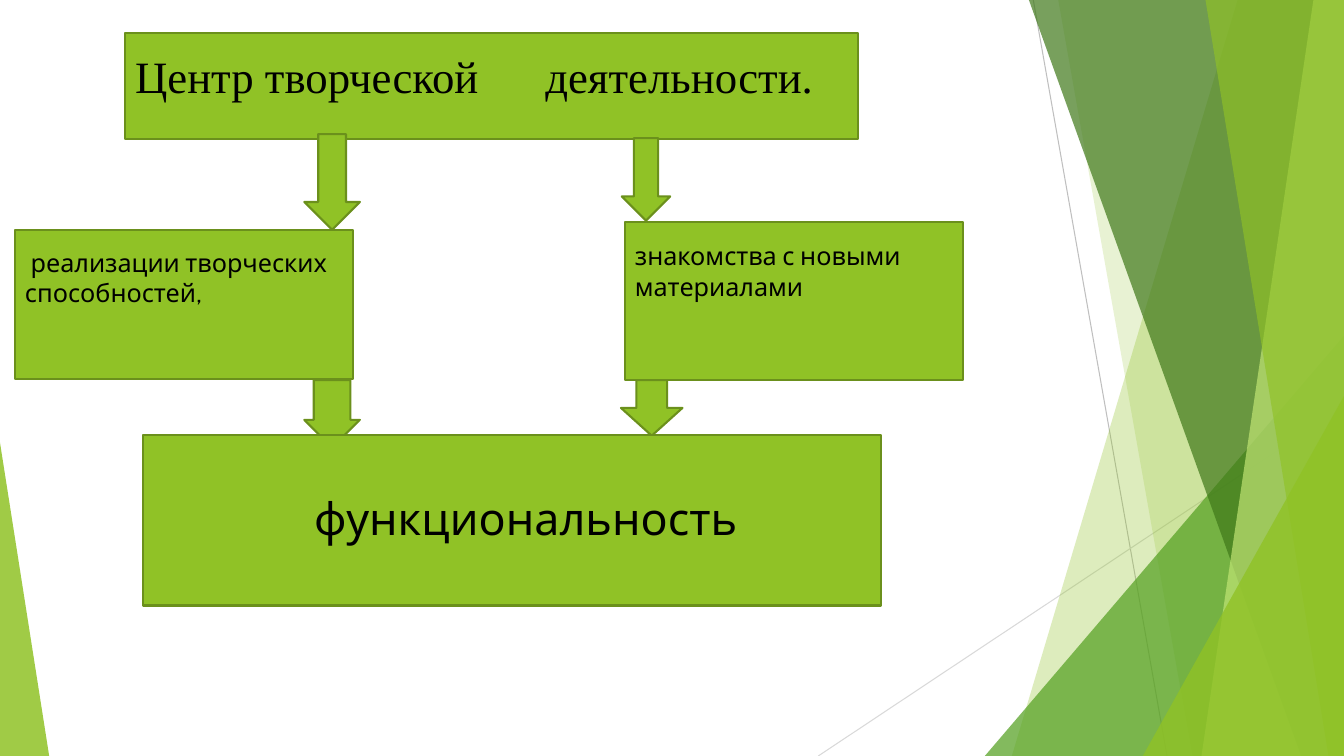
from dataclasses import dataclass

from lxml.etree import SubElement
from pptx import Presentation
from pptx.dml.color import RGBColor
from pptx.enum.shapes import MSO_CONNECTOR as Connector, MSO_SHAPE as Preset
from pptx.enum.text import MSO_ANCHOR as Anchor, MSO_AUTO_SIZE as AutoSize, PP_ALIGN as Align
from pptx.oxml.ns import qn
from pptx.util import Cm, Pt

WIDTH, HEIGHT = 33.87, 19.05

BLACK = RGBColor(0x00, 0x00, 0x00)
LIME = RGBColor(0x90, 0xC2, 0x26)
OLIVE = RGBColor(0x6B, 0x90, 0x1C)
GREEN = RGBColor(0x54, 0xA0, 0x21)
FOREST = RGBColor(0x3F, 0x78, 0x19)
PALE_LIME = RGBColor(0xC0, 0xE4, 0x74)
GRAY = RGBColor(0xBF, 0xBF, 0xBF)
LIGHT_GRAY = RGBColor(0xD9, 0xD9, 0xD9)


@dataclass
class Frame:
    left: float
    top: float
    width: float
    height: float

    def lengths(self) -> list:
        return [Cm(value) for value in (self.left, self.top, self.width, self.height)]


@dataclass
class Ray:
    start: tuple
    end: tuple
    color: RGBColor


@dataclass
class Band:
    """Full-height strip reaching the right edge of the slide."""
    top_left: float
    bottom_left: float
    bottom_right: float
    color: RGBColor
    opacity: int


@dataclass
class Wedge:
    frame: Frame
    apex: float
    color: RGBColor
    opacity: int


@dataclass
class Block:
    preset: Preset
    frame: Frame
    shaft: float = 0.5


@dataclass
class Label:
    text: str
    frame: Frame
    size: int = 18
    font: str = "Cabin"


RAYS = [
    Ray((26.04, 0), (29.41, HEIGHT), GRAY),
    Ray((WIDTH, 10.24), (20.62, HEIGHT), LIGHT_GRAY),
]
FACETS = [
    Band(31.19, 25.5, WIDTH, LIME, 30),
    Band(26.67, 30.05, WIDTH, LIME, 20),
    Wedge(Frame(24.82, 8.46, 9.05, 10.59), 1, GREEN, 72),
    Band(25.93, 32.79, WIDTH, FOREST, 70),
    Band(33.1, 30.28, WIDTH, PALE_LIME, 70),
    Band(30.38, 33.48, WIDTH, LIME, 65),
    Wedge(Frame(28.8, 9.98, 5.07, 9.07), 1, LIME, 80),
    Wedge(Frame(0, 11.15, 1.24, 7.9), 0, LIME, 85),
]
BLOCKS = [
    Block(Preset.RECTANGLE, Frame(0.38, 5.79, 8.51, 3.76)),
    Block(Preset.RECTANGLE, Frame(3.15, 0.84, 18.47, 2.67)),
    Block(Preset.RECTANGLE, Frame(15.75, 5.59, 8.51, 3.99)),
    Block(Preset.DOWN_ARROW, Frame(7.67, 3.38, 1.4, 2.41)),
    Block(Preset.DOWN_ARROW, Frame(15.67, 3.48, 1.22, 2.08)),
    Block(Preset.DOWN_ARROW, Frame(7.67, 9.58, 1.4, 1.7), 0.66),
    Block(Preset.DOWN_ARROW, Frame(15.65, 9.58, 1.55, 1.4)),
    Block(Preset.RECTANGLE, Frame(3.61, 10.97, 18.59, 4.29)),
]
TITLE = Label("Центр творческой\tдеятельности.", Frame(3.15, 0.33, 18.47, 2.39),
              32, "Times New Roman")
TITLE_TAB = 10.34
LABELS = [
    Label(" реализации творческих способностей,", Frame(0.38, 6.1, 8.2, 1.8)),
    Label("знакомства с новыми материалами", Frame(15.75, 5.94, 8.51, 1.8)),
    Label("функциональность", Frame(7.67, 12.24, 12.14, 1.63), 32),
]


def set_all(target, values: dict) -> None:
    for name, value in values.items():
        setattr(target, name, value)


def fill_shape(shape, color: RGBColor, opacity: int = 100) -> None:
    shape.shadow.inherit = False
    shape.fill.solid()
    shape.fill.fore_color.rgb = color
    if opacity < 100:
        color_element = shape.fill._xPr.find(qn("a:solidFill"))[0]
        SubElement(color_element, qn("a:alpha"), val=str(opacity * 1000))


def draw_ray(slide, ray: Ray) -> None:
    points = [Cm(value) for value in (*ray.start, *ray.end)]
    line = slide.shapes.add_connector(Connector.STRAIGHT, *points)
    line.line.color.rgb = ray.color
    line.line.width = Pt(0.75)
    SubElement(line._element.spPr, qn("a:effectLst"))


def draw_facet(slide, facet) -> None:
    if isinstance(facet, Band):
        builder = slide.shapes.build_freeform(Cm(facet.top_left), 0)
        corners = [(WIDTH, 0), (facet.bottom_right, HEIGHT), (facet.bottom_left, HEIGHT)]
        if facet.bottom_right < WIDTH:
            corners.insert(1, (WIDTH, HEIGHT))
        builder.add_line_segments([(Cm(x), Cm(y)) for x, y in corners], close=True)
        shape = builder.convert_to_shape()
    else:
        shape = slide.shapes.add_shape(Preset.ISOSCELES_TRIANGLE, *facet.frame.lengths())
        shape.adjustments[0] = facet.apex
    fill_shape(shape, facet.color, facet.opacity)
    shape.line.fill.background()


def draw_block(slide, block: Block) -> None:
    shape = slide.shapes.add_shape(block.preset, *block.frame.lengths())
    if block.preset == Preset.DOWN_ARROW:
        shape.adjustments[0] = block.shaft
    fill_shape(shape, LIME)
    shape.line.color.rgb = OLIVE
    shape.line.width = Pt(1.5)


def write_label(shape, label: Label, anchor: Anchor = Anchor.TOP) -> None:
    set_all(shape.text_frame, {"word_wrap": True, "auto_size": AutoSize.NONE,
                               "vertical_anchor": anchor})
    paragraph = shape.text_frame.paragraphs[0]
    paragraph.alignment = Align.LEFT
    run = paragraph.add_run()
    run.text = label.text
    set_all(run.font, {"name": label.font, "size": Pt(label.size)})
    run.font.color.rgb = BLACK


def place_title(slide) -> None:
    title = slide.shapes.title
    set_all(title, dict(zip(("left", "top", "width", "height"), TITLE.frame.lengths())))
    write_label(title, TITLE, Anchor.BOTTOM)
    properties = title.text_frame.paragraphs[0]._p.get_or_add_pPr()
    tabs = SubElement(properties, qn("a:tabLst"))
    SubElement(tabs, qn("a:tab"), pos=str(Cm(TITLE_TAB)), algn="l")
    # Bring the title in front of its box
    slide.shapes._spTree.append(title._element)


def main() -> None:
    presentation = Presentation()
    set_all(presentation, {"slide_width": Cm(WIDTH), "slide_height": Cm(HEIGHT)})
    slide = presentation.slides.add_slide(presentation.slide_layouts[5])

    # Background decoration
    for ray in RAYS:
        draw_ray(slide, ray)
    for facet in FACETS:
        draw_facet(slide, facet)

    # Diagram boxes and arrows
    for block in BLOCKS:
        draw_block(slide, block)

    # Texts
    place_title(slide)
    for label in LABELS:
        write_label(slide.shapes.add_textbox(*label.frame.lengths()), label)

    presentation.save("out.pptx")


if __name__ == "__main__":
    main()
